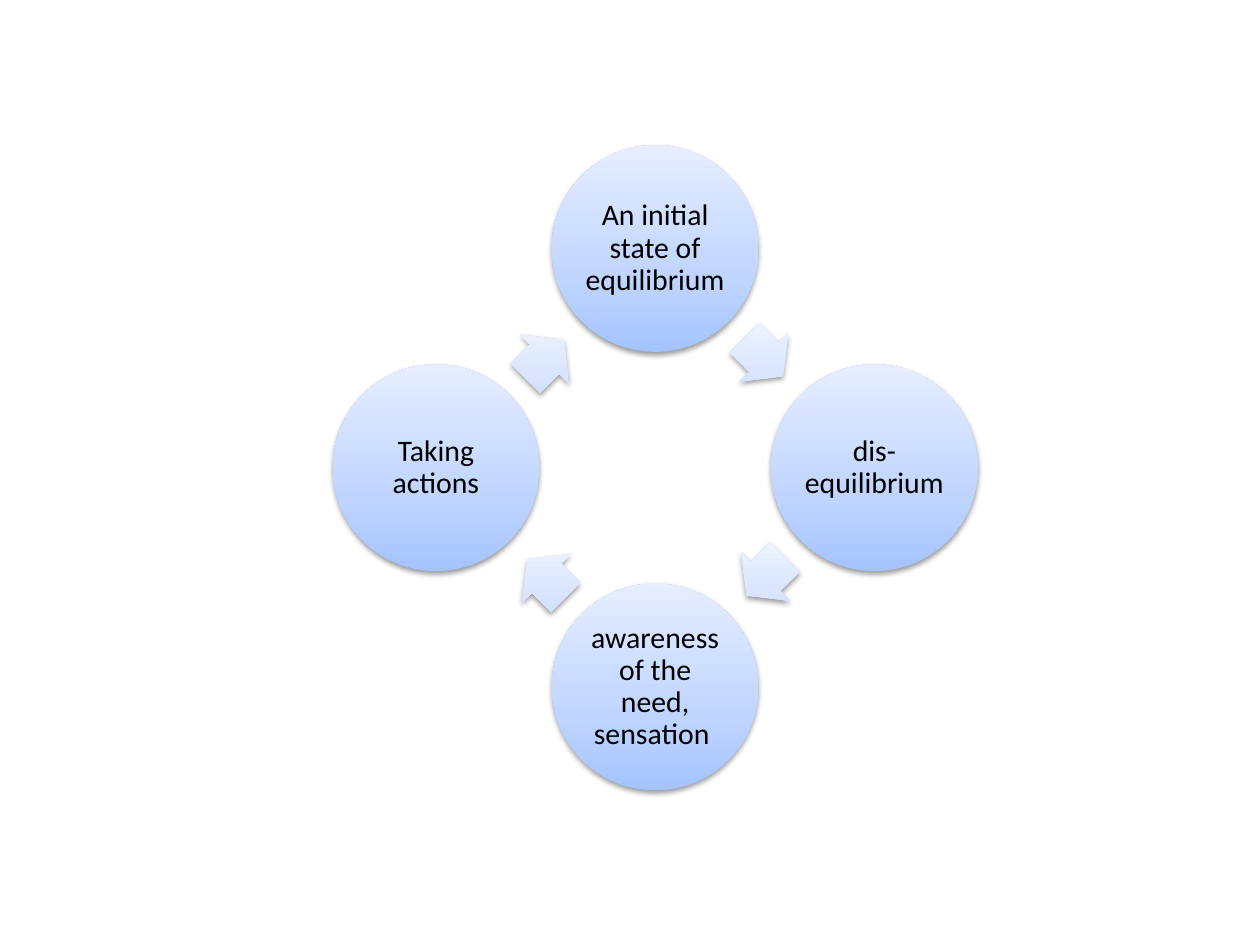
from math import cos, radians, sin

from lxml.etree import SubElement
from pptx import Presentation
from pptx.dml.color import RGBColor
from pptx.enum.shapes import MSO_SHAPE as Preset
from pptx.enum.text import MSO_ANCHOR as Anchor, PP_ALIGN as Align
from pptx.oxml import parse_xml
from pptx.oxml.ns import nsdecls, qn
from pptx.util import Inches, Pt

THEME = {
    "font": "Calibri",
    "size": Pt(17),
    "text": RGBColor(0, 0, 0),
    "state": ("A4C4FF", "BFD4FF", "E6EEFF"),
    "arrow": ("CDDDFE", "DBE6FE", "F0F5FF"),
    "stops": (0, 35, 100),
}

WIDTH, HEIGHT = Inches(10), Inches(7.5)
CENTER_X, CENTER_Y = 0.52 * WIDTH, 0.495 * HEIGHT
DIAMETER = 0.164 * WIDTH
ARROW_LENGTH, ARROW_WIDTH = 0.043 * WIDTH, 0.055 * WIDTH
STATE_ORBIT, ARROW_ORBIT = 0.174 * WIDTH, 0.123 * WIDTH
INSET = Inches(0.02)

STATES = (
    "An initial state of equilibrium",
    "dis- equilibrium",
    "awareness of the need, sensation ",
    "Taking actions",
)

presentation = Presentation()
presentation.slide_width, presentation.slide_height = WIDTH, HEIGHT
slide = presentation.slides.add_slide(presentation.slide_layouts[6])


def add_on_orbit(preset, orbit, angle, width, height):
    """Centre a shape on an orbit, at degrees clockwise from the top."""
    x = CENTER_X + orbit * sin(radians(angle))
    y = CENTER_Y - orbit * cos(radians(angle))
    return slide.shapes.add_shape(
        preset, round(x - width / 2), round(y - height / 2), round(width), round(height)
    )


def shade(shape, colors):
    """Give a shape an upright gradient, no outline and a soft shadow below."""
    shape.line.fill.background()
    shape.shadow.inherit = False
    stops = "".join(
        f'<a:gs pos="{stop * 1000}"><a:srgbClr val="{color}"/></a:gs>'
        for stop, color in zip(THEME["stops"], colors)
    )
    properties = shape._element.spPr
    properties.find(qn("a:ln")).addprevious(parse_xml(
        f'<a:gradFill {nsdecls("a")} rotWithShape="0"><a:gsLst>{stops}</a:gsLst>'
        '<a:lin ang="16200000" scaled="0"/></a:gradFill>'
    ))
    shadow = SubElement(
        properties.find(qn("a:effectLst")), qn("a:outerShdw"),
        blurRad="40000", dist="20000", dir="5400000", rotWithShape="0",
    )
    shadow_color = SubElement(shadow, qn("a:srgbClr"), val="000000")
    SubElement(shadow_color, qn("a:alpha"), val="38000")


step = 360 / len(STATES)
for index, wording in enumerate(STATES):
    angle = index * step
    state = add_on_orbit(Preset.OVAL, STATE_ORBIT, angle, DIAMETER, DIAMETER)
    shade(state, THEME["state"])

    frame = state.text_frame
    frame.word_wrap = True
    frame.vertical_anchor = Anchor.MIDDLE
    frame.margin_left = frame.margin_right = INSET
    frame.margin_top = frame.margin_bottom = INSET
    paragraph = frame.paragraphs[0]
    paragraph.alignment = Align.CENTER
    paragraph.line_spacing = 0.9
    paragraph.space_after = Pt(6)
    run = paragraph.add_run()
    run.text = wording
    run.font.name = THEME["font"]
    run.font.size = THEME["size"]
    run.font.color.rgb = THEME["text"]

    # Each arrow sits just short of the midpoint to the next state.
    arrow = add_on_orbit(
        Preset.RIGHT_ARROW, ARROW_ORBIT, angle + step / 2 - 0.5, ARROW_LENGTH, ARROW_WIDTH
    )
    arrow.rotation = angle + step / 2
    arrow.adjustments[0], arrow.adjustments[1] = 0.6, 0.5
    shade(arrow, THEME["arrow"])

presentation.save("out.pptx")
